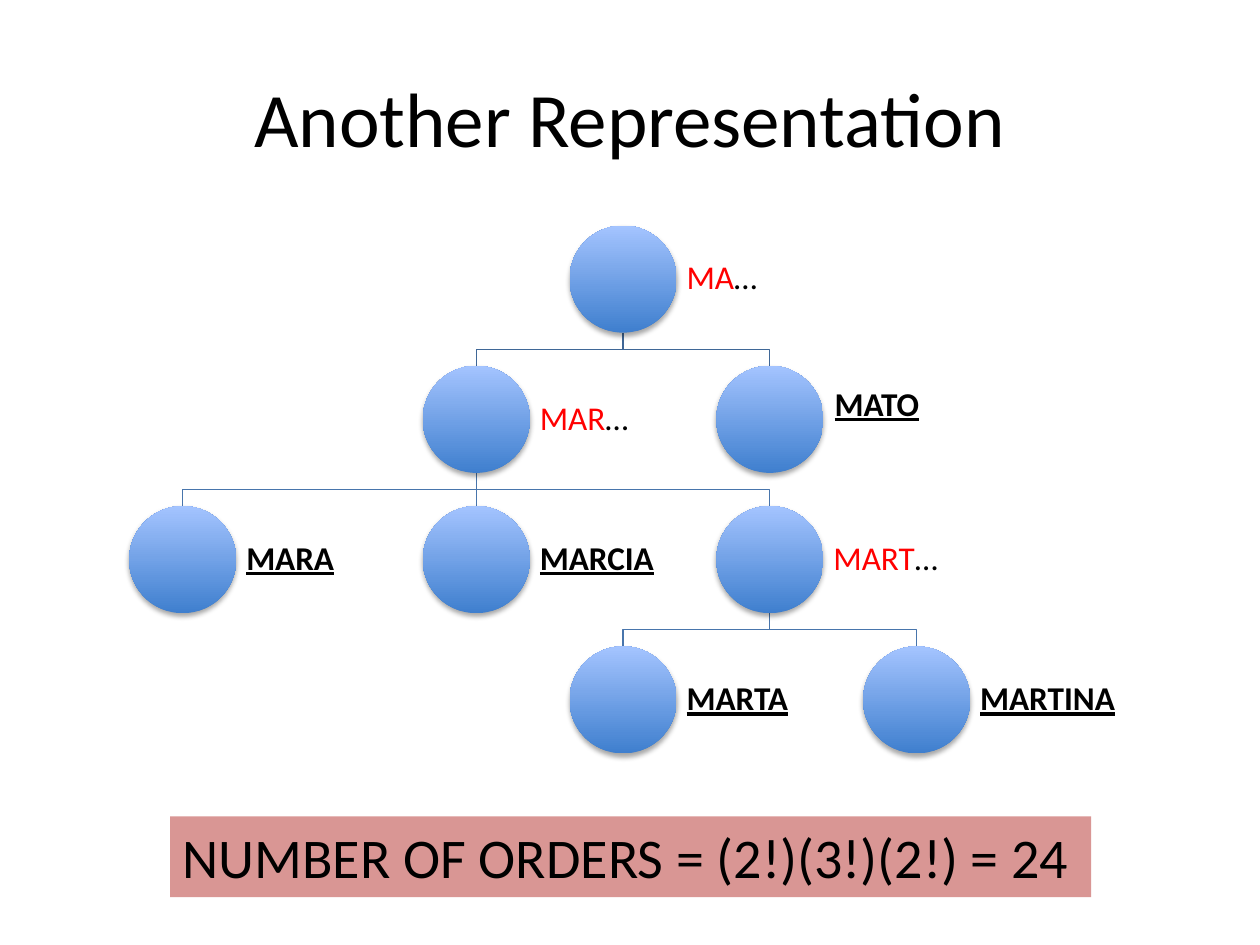
"""Build a slide with a tree of word prefixes and the resulting count."""
from lxml import etree
from pptx import Presentation
from pptx.dml.color import RGBColor
from pptx.enum.shapes import MSO_CONNECTOR, MSO_SHAPE
from pptx.enum.text import MSO_ANCHOR, MSO_AUTO_SIZE, PP_ALIGN
from pptx.oxml import parse_xml
from pptx.oxml.ns import nsdecls, qn
from pptx.util import Inches, Pt

STRAIGHT = MSO_CONNECTOR.STRAIGHT
OVAL = MSO_SHAPE.OVAL
MIDDLE = MSO_ANCHOR.MIDDLE
CENTER = PP_ALIGN.CENTER
FIT_SHAPE = MSO_AUTO_SIZE.SHAPE_TO_FIT_TEXT

FONT = "Calibri"
COLORS = {
    "text": "000000",
    "prefix": "FF0000",
    "circle_low": "3F7FCE",
    "circle_high": "A4C4FF",
    "branch_top": "3F6797",
    "branch": "4875AC",
    "banner": "D99694",
}
CIRCLE = 0.85
LEFT_CENTER, SIBLING_GAP = 1.45, 2.33
TOP, ROW_GAP = 1.79, 3.34 / 3
LABEL_W = 1.27
MATO_SHIFT = (0.01, -0.11)

# name: (column in half sibling gaps, row, parent)
NODES = {
    "MA…": (3, 0, None),
    "MAR…": (2, 1, "MA…"),
    "MATO": (4, 1, "MA…"),
    "MARA": (0, 2, "MAR…"),
    "MARCIA": (2, 2, "MAR…"),
    "MART…": (4, 2, "MAR…"),
    "MARTA": (3, 3, "MART…"),
    "MARTINA": (5, 3, "MART…"),
}


def rgb(name):
    """Return a palette colour."""
    return RGBColor.from_string(COLORS[name])


def add_run(p, text, size, color="text", word=False):
    """Append a run, bold and underlined for a complete word."""
    r = p.add_run()
    r.text = text
    r.font.name = FONT
    r.font.size = Pt(size)
    r.font.color.rgb = rgb(color)
    if word:
        r.font.bold = r.font.underline = True


def node_place(name):
    """Return the centre x and the top y of a node in inches."""
    col, row, _ = NODES[name]
    return LEFT_CENTER + col * SIBLING_GAP / 2, TOP + row * ROW_GAP


def add_branch(slide, name):
    """Draw the line from a node's parent down to the node."""
    _, row, parent = NODES[name]
    x2, y2 = node_place(name)
    x1, y1 = node_place(parent)
    y1 += CIRCLE
    middle = (y1 + y2) / 2
    if x1 == x2:
        sp = slide.shapes.add_connector(
            STRAIGHT, Inches(x1), Inches(y1), Inches(x2), Inches(y2))
        etree.SubElement(sp._element.spPr, qn("a:effectLst"))
    else:
        builder = slide.shapes.build_freeform(Inches(x1), Inches(y1))
        corners = [(x1, middle), (x2, middle), (x2, y2)]
        builder.add_line_segments(
            [(Inches(x), Inches(y)) for x, y in corners], close=False)
        sp = builder.convert_to_shape()
        sp.fill.background()
        sp.shadow.inherit = False
    sp.line.color.rgb = rgb("branch_top" if row == 1 else "branch")
    sp.line.width = Pt(0.75)


def add_shadow(sp):
    """Give a shape a soft shadow below it."""
    sp.shadow.inherit = False
    effects = sp._element.spPr.find(qn("a:effectLst"))
    effects.append(parse_xml(
        f'<a:outerShdw {nsdecls("a")} blurRad="{Pt(3.1)}" dist="{Pt(1.8)}" '
        'dir="5400000" rotWithShape="0"><a:srgbClr val="000000">'
        '<a:alpha val="35000"/></a:srgbClr></a:outerShdw>'))


def add_circle(slide, name):
    """Draw the gradient circle of a node."""
    x, y = node_place(name)
    sp = slide.shapes.add_shape(
        OVAL, Inches(x - CIRCLE / 2), Inches(y), Inches(CIRCLE), Inches(CIRCLE))
    sp.fill.gradient()
    sp.fill.gradient_angle = 90
    for stop, color in zip(sp.fill.gradient_stops, ("circle_low", "circle_high")):
        stop.color.rgb = rgb(color)
    sp.line.fill.background()
    add_shadow(sp)


def add_label(slide, name):
    """Write a prefix or a complete word to the right of its circle."""
    x, y = node_place(name)
    dx, dy = MATO_SHIFT if name == "MATO" else (0, 0)
    sp = slide.shapes.add_textbox(
        Inches(x + CIRCLE / 2 + dx), Inches(y + dy), Inches(LABEL_W), Inches(CIRCLE))
    tf = sp.text_frame
    tf.word_wrap = True
    tf.vertical_anchor = MIDDLE
    tf.margin_left = tf.margin_right = Inches(0.08)
    tf.margin_top = tf.margin_bottom = Inches(0.08)
    p = tf.paragraphs[0]
    p.line_spacing = 0.9
    if name.endswith("…"):
        add_run(p, name[:-1], 19, "prefix")
        add_run(p, "…", 19)
    else:
        add_run(p, name, 19, word=True)


def add_title(slide, text):
    """Place and fill the title."""
    sp = slide.shapes.title
    sp.left, sp.top, sp.width, sp.height = map(Inches, (0.5, 0.3, 9, 1.25))
    sp.text_frame.vertical_anchor = MIDDLE
    p = sp.text_frame.paragraphs[0]
    p.alignment = CENTER
    add_run(p, text, 44)


def add_banner(slide, text):
    """Write the result on a filled band."""
    sp = slide.shapes.add_textbox(*map(Inches, (1.35, 6.48, 7.31, 0.64)))
    sp.fill.solid()
    sp.fill.fore_color.rgb = rgb("banner")
    tf = sp.text_frame
    tf.word_wrap = False
    tf.auto_size = FIT_SHAPE
    add_run(tf.paragraphs[0], text, 32)


def main():
    """Build and save the slide."""
    prs = Presentation()
    prs.slide_width, prs.slide_height = Inches(10), Inches(7.5)
    slide = prs.slides.add_slide(prs.slide_layouts[5])
    add_title(slide, "Another Representation")
    for name, (_, _, parent) in NODES.items():
        if parent:
            add_branch(slide, name)
    for name in NODES:
        add_circle(slide, name)
        add_label(slide, name)
    add_banner(slide, "NUMBER OF ORDERS = (2!)(3!)(2!) = 24")
    prs.save("out.pptx")


if __name__ == "__main__":
    main()
